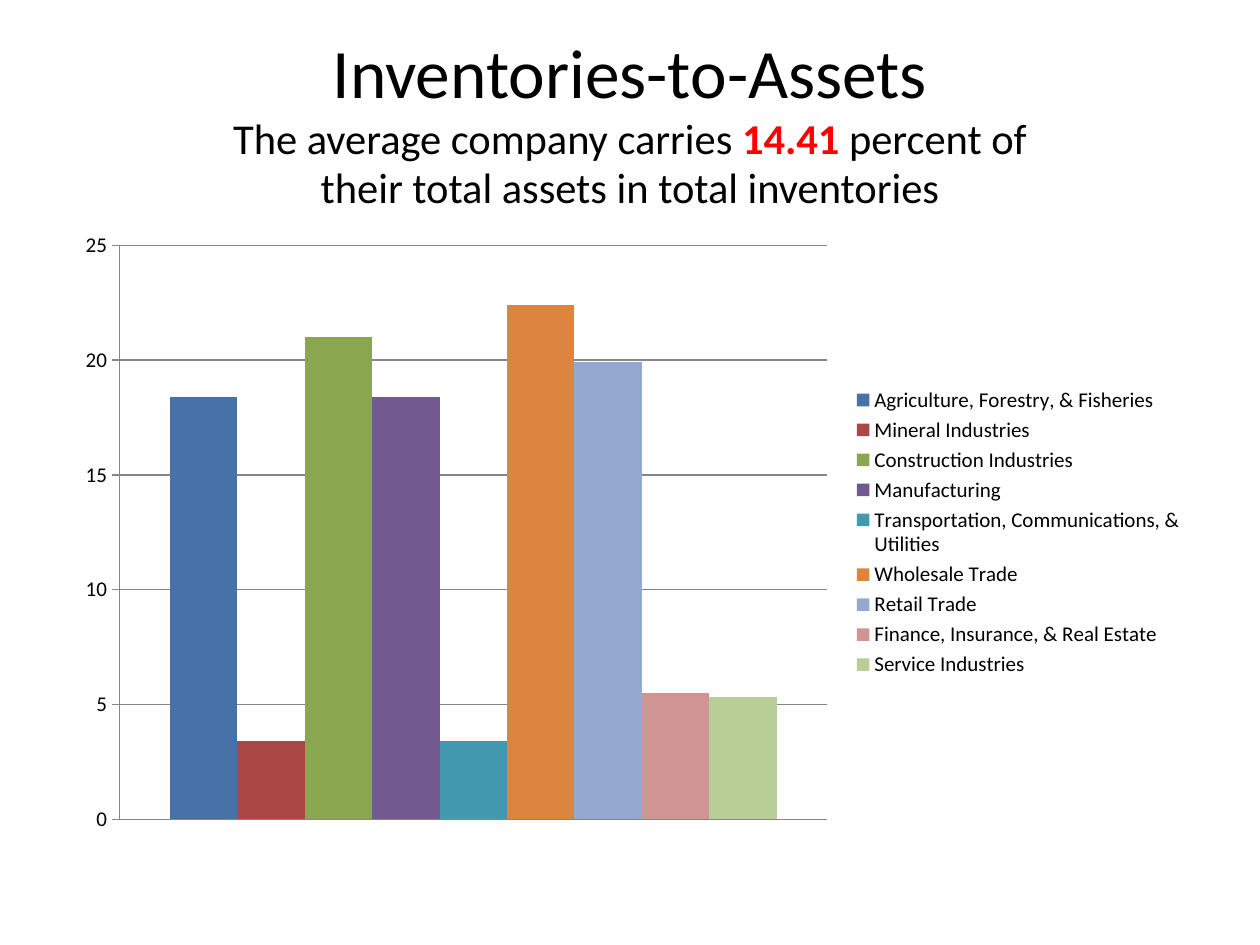
from pptx import Presentation
from pptx import util as u
from pptx.chart import data
from pptx.dml.color import RGBColor
from pptx.enum import chart as ch, text

Pt = u.Pt
FONT = "Calibri"
COLORS = {"text": "000000", "accent": "FF0000", "grid": "868686"}

prs = Presentation()
prs.slide_width, prs.slide_height = Pt(720), Pt(540)
s = prs.slides.add_slide(prs.slide_layouts[6])


def add_run(p, content, size=24.3, color="text", bold=False):
    r = p.add_run()
    r.text = content
    r.font.name, r.font.size, r.font.bold = FONT, Pt(size), bold
    r.font.color.rgb = RGBColor.from_string(COLORS[color])


# Title and key finding
tf = s.shapes.add_textbox(Pt(36), Pt(21.6), Pt(648), Pt(98.6)).text_frame
tf.word_wrap = True
tf.vertical_anchor = text.MSO_ANCHOR.MIDDLE
p = tf.paragraphs[0]
p.alignment = text.PP_ALIGN.CENTER
p.line_spacing = 0.97
add_run(p, "Inventories-to-Assets", size=39.6)
p.add_line_break()
add_run(p, "The average company carries ")
add_run(p, "14.41", color="accent", bold=True)
add_run(p, " percent of")
p.add_line_break()
add_run(p, "their total assets in total inventories")

# Inventories as a percentage of assets, by industry
industries = [
    ("Agriculture, Forestry, & Fisheries", 18.4, "4672A8"),
    ("Mineral Industries", 3.4, "AB4744"),
    ("Construction Industries", 21, "8AA64F"),
    ("Manufacturing", 18.4, "725990"),
    ("Transportation, Communications, & Utilities", 3.4, "4299B0"),
    ("Wholesale Trade", 22.4, "DC853E"),
    ("Retail Trade", 19.9, "93A9D0"),
    ("Finance, Insurance, & Real Estate", 5.5, "D09493"),
    ("Service Industries", 5.3, "B9CD96"),
]
cd = data.CategoryChartData()
cd.categories = ["1"]
for name, value, _ in industries:
    cd.add_series(name, [value])
chart = s.shapes.add_chart(ch.XL_CHART_TYPE.COLUMN_CLUSTERED,
                           Pt(36), Pt(126), Pt(648), Pt(356.4), cd).chart
chart.has_title = False
chart.font.name, chart.font.size = FONT, Pt(12)
chart.font.color.rgb = RGBColor.from_string(COLORS["text"])

# Columns
plot = chart.plots[0]
plot.gap_width, plot.overlap = 150, 0
plot.vary_by_categories = False
for series, (_, _, color) in zip(plot.series, industries):
    series.format.fill.solid()
    series.format.fill.fore_color.rgb = RGBColor.from_string(color)

# Axes and legend
chart.category_axis.visible = False
axis = chart.value_axis
axis.minimum_scale, axis.maximum_scale, axis.major_unit = 0, 25, 5
axis.major_tick_mark = ch.XL_TICK_MARK.OUTSIDE
axis.has_major_gridlines = True
for line in (axis.format.line, axis.major_gridlines.format.line):
    line.width = Pt(0.75)
    line.color.rgb = RGBColor.from_string(COLORS["grid"])
chart.has_legend = True
chart.legend.position = ch.XL_LEGEND_POSITION.RIGHT
chart.legend.include_in_layout = False

prs.save("out.pptx")
